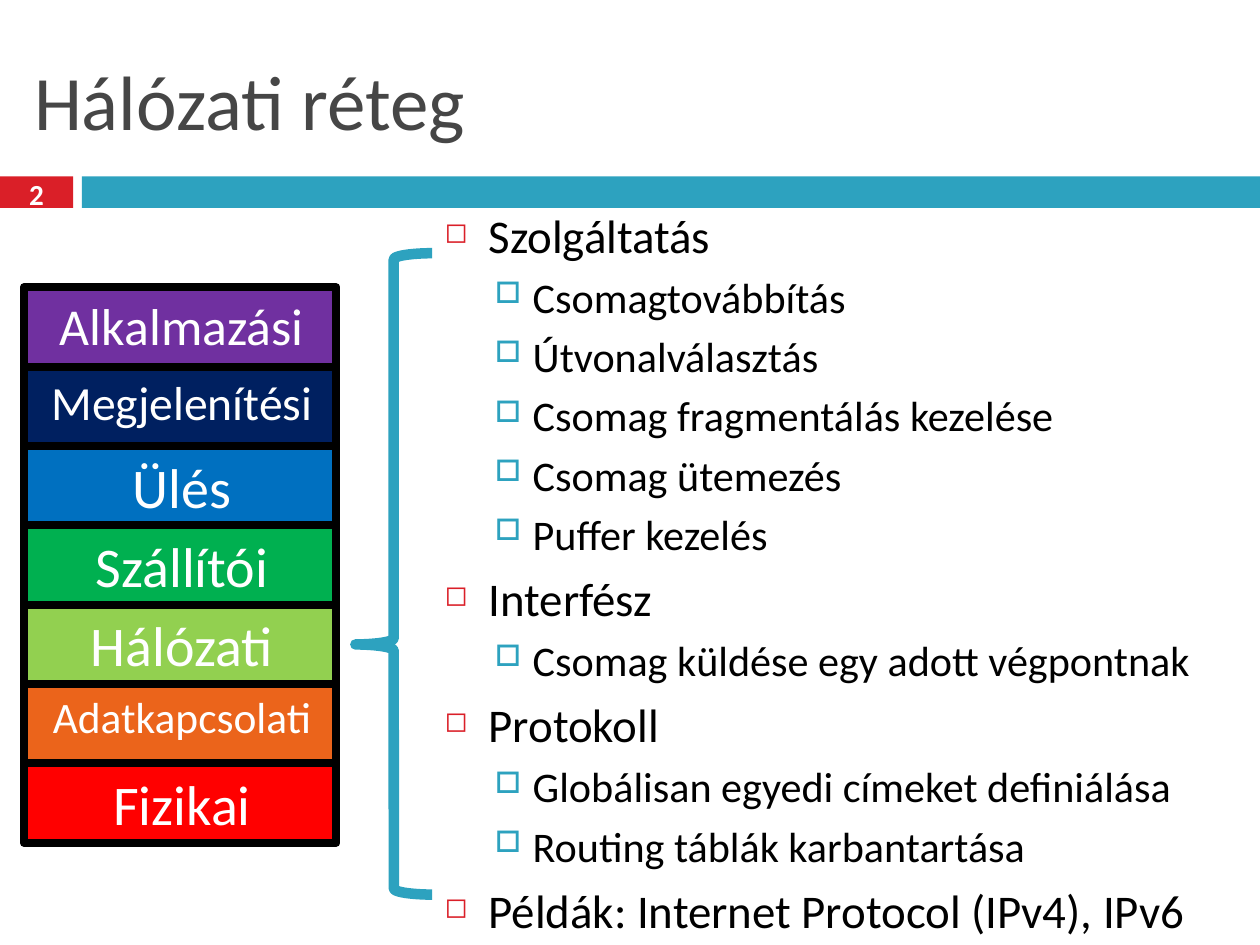
from lxml.etree import SubElement
from pptx import Presentation
from pptx.dml.color import RGBColor
from pptx.enum.shapes import MSO_SHAPE as Shape
from pptx.enum.text import MSO_ANCHOR as Anchor, PP_ALIGN as Align
from pptx.oxml.ns import qn
from pptx.util import Inches, Pt

COLORS = {
    "red": "DA1F28", "teal": "2DA2BF", "gray": "464646", "black": "000000",
    "white": "FFFFFF", "purple": "7030A0", "navy": "002060", "blue": "0070C0",
    "green": "00B050", "lime": "92D050", "orange": "EB641B", "bright red": "FF0000",
}
FONT = "Calibri"
TITLE = "Hálózati réteg"
PAGE_NUMBER = "2"
LAYERS = [
    ("Alkalmazási", "purple", 29.6),
    ("Megjelenítési", "navy", 27.2),
    ("Ülés", "blue", 32),
    ("Szállítói", "green", 32),
    ("Hálózati", "lime", 32),
    ("Adatkapcsolati", "orange", 24.8),
    ("Fizikai", "bright red", 32),
]
TOPICS = [
    ("Szolgáltatás", ["Csomagtovábbítás", "Útvonalválasztás",
                      "Csomag fragmentálás kezelése", "Csomag ütemezés", "Puffer kezelés"]),
    ("Interfész", ["Csomag küldése egy adott végpontnak"]),
    ("Protokoll", ["Globálisan egyedi címeket definiálása", "Routing táblák karbantartása"]),
    ("Példák: Internet Protocol (IPv4), IPv6", []),
]
LEVELS = [
    {"size": 26.8, "before": 6.2, "margin": 0.35, "hang": 0.35,
     "bullet": ("◻", "red", 60)},
    {"size": 24.1, "before": 4.9, "margin": 0.7, "hang": 0.3,
     "bullet": ("□", "teal", 70)},
]
LAYER_LEFT, LAYER_TOP, LAYER_WIDTH, LAYER_HEIGHT = 0.19, 2.28, 2.48, 0.63


def rgb(name):
    return RGBColor.from_string(COLORS[name])


def write(para, text, size, color="black", bold=False, align=Align.LEFT,
          before=0, margin=0, hang=0, bullet=None):
    para.alignment = align
    para.space_before = Pt(before)
    span = para.add_run()
    span.text = text
    span.font.name = FONT
    span.font.size = Pt(size)
    span.font.bold = bold
    span.font.color.rgb = rgb(color)
    props = para._p.get_or_add_pPr()
    props.set("marL", str(Inches(margin)))
    props.set("indent", str(-Inches(hang)))
    if bullet:
        mark, mark_color, percent = bullet
        tint = SubElement(props, qn("a:buClr"))
        SubElement(tint, qn("a:srgbClr"), val=COLORS[mark_color])
        SubElement(props, qn("a:buSzPct"), val=str(percent * 1000))
        SubElement(props, qn("a:buChar"), char=mark)


def add_box(page, left, top, width, height, anchor=Anchor.TOP):
    box = page.shapes.add_textbox(*map(Inches, (left, top, width, height)))
    frame = box.text_frame
    frame.word_wrap = True
    frame.vertical_anchor = anchor
    return frame


def add_outline(page, kind, left, top, width, height, fill=None, line=None, weight=0):
    shape = page.shapes.add_shape(kind, *map(Inches, (left, top, width, height)))
    shape.shadow.inherit = False
    if fill:
        shape.fill.solid()
        shape.fill.fore_color.rgb = rgb(fill)
    else:
        shape.fill.background()
    if line:
        shape.line.color.rgb = rgb(line)
        shape.line.width = Pt(weight)
    else:
        shape.line.fill.background()
    return shape


def add_title(page):
    title = page.shapes.title
    title.left, title.top, title.width, title.height = map(Inches, (0.17, 0.25, 9.67, 1.08))
    title.text_frame.vertical_anchor = Anchor.MIDDLE
    write(title.text_frame.paragraphs[0], TITLE, 44, color="gray")


def add_band(page):
    add_outline(page, Shape.RECTANGLE, 0, 1.4, 0.58, 0.25, fill="red")
    add_outline(page, Shape.RECTANGLE, 0.65, 1.4, 9.35, 0.25, fill="teal")
    frame = add_box(page, 0, 1.37, 0.58, 0.33, Anchor.MIDDLE)
    write(frame.paragraphs[0], PAGE_NUMBER, 16.6, color="white", bold=True, align=Align.CENTER)


def add_topics(page):
    frame = add_box(page, 3.43, 1.75, 6.4, 5.58, Anchor.MIDDLE)
    lines = [(level, text) for topic, details in TOPICS
             for level, text in [(0, topic)] + [(1, detail) for detail in details]]
    for index, (level, text) in enumerate(lines):
        para = frame.add_paragraph() if index else frame.paragraphs[0]
        para.level = level
        write(para, text, **LEVELS[level])


def add_layers(page):
    for index, (name, fill, size) in enumerate(LAYERS):
        top = LAYER_TOP + index * LAYER_HEIGHT
        add_outline(page, Shape.RECTANGLE, LAYER_LEFT, top, LAYER_WIDTH, LAYER_HEIGHT,
                    fill=fill, line="black", weight=4.5)
        frame = add_box(page, LAYER_LEFT - 0.03, top, LAYER_WIDTH - 0.03, LAYER_HEIGHT)
        write(frame.paragraphs[0], name, size, color="white", align=Align.CENTER, margin=0.12)


def main():
    deck = Presentation()
    deck.slide_width, deck.slide_height = Inches(10), Inches(7.5)
    page = deck.slides.add_slide(deck.slide_layouts[5])
    add_band(page)
    add_title(page)
    add_topics(page)
    brace = add_outline(page, Shape.LEFT_BRACE, 2.82, 2.01, 0.61, 5.09, line="teal", weight=6)
    brace.adjustments[0], brace.adjustments[1] = 0.08, 0.61
    add_layers(page)
    deck.save("out.pptx")


if __name__ == "__main__":
    main()
